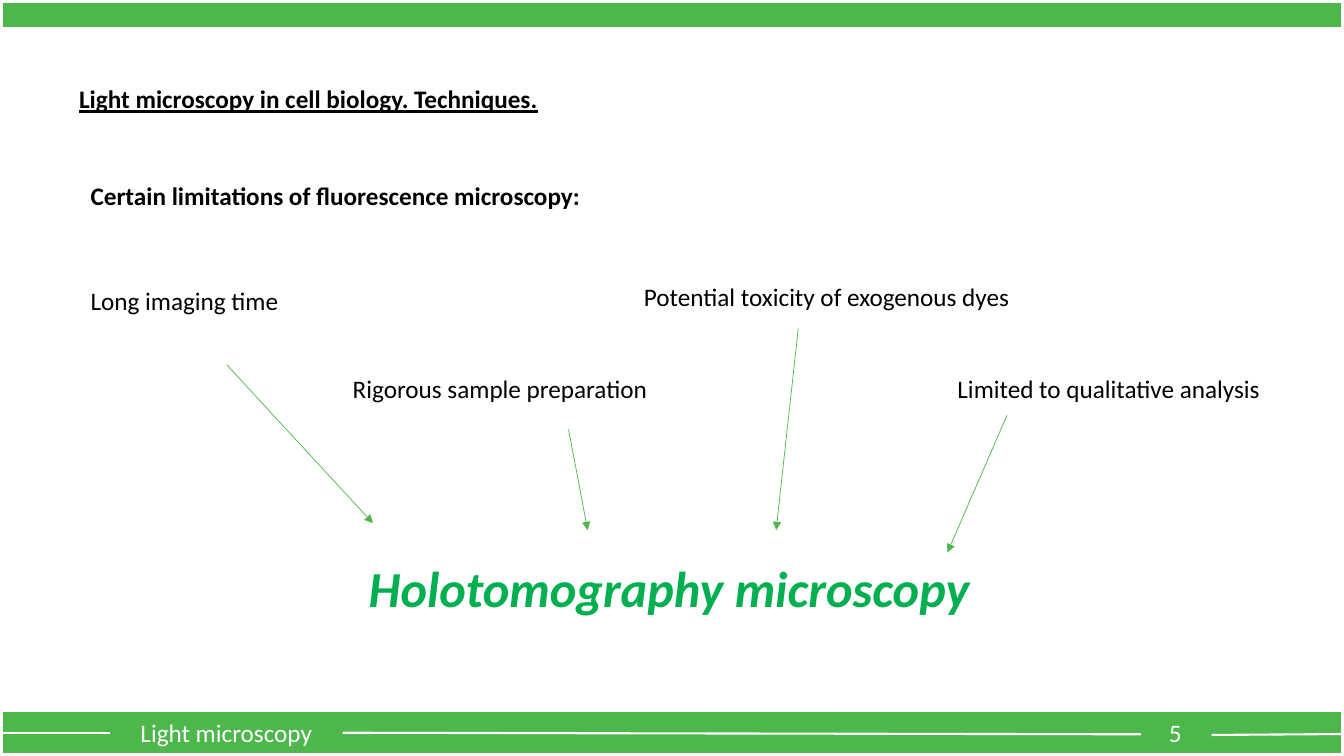
"""Builds the slide on the limitations of fluorescence microscopy."""
from dataclasses import dataclass

from lxml import etree
from pptx import Presentation
from pptx import util as u
from pptx.dml.color import RGBColor
from pptx.enum import shapes, text
from pptx.oxml import ns
from pptx.slide import Slide

GREEN = RGBColor(0x4D, 0xB7, 0x4C)
TITLE_GREEN = RGBColor(0x00, 0xB0, 0x50)
WHITE = RGBColor(0xFF, 0xFF, 0xFF)
BLACK = RGBColor(0x00, 0x00, 0x00)

SLIDE_WIDTH = 960
SLIDE_HEIGHT = 540
LABEL_HEIGHT = 29


@dataclass(frozen=True)
class Band:
    top: float
    height: float


@dataclass(frozen=True)
class Label:
    words: str
    left: float
    top: float
    width: float
    height: float = LABEL_HEIGHT
    size: float = 18
    color: RGBColor = BLACK
    centered: bool = False
    bold: bool = False
    italic: bool = False
    underline: bool = False
    wrap: bool = True


@dataclass(frozen=True)
class Stroke:
    start: tuple[float, float]
    end: tuple[float, float]
    color: RGBColor = WHITE
    weight: float = 1.5
    arrow: bool = False


@dataclass(frozen=True)
class Limitation:
    label: Label
    arrow_start: tuple[float, float]
    arrow_end: tuple[float, float]


BANDS = [Band(0, 21.6), Band(506.2, 33.8)]

FOOTER_RULES = [
    Stroke((0, 523.4), (78.5, 523.4)),
    Stroke((244.8, 523.4), (815, 524.5)),
    Stroke((865.5, 525), (SLIDE_WIDTH, 524.3)),
]

FOOTER_TOP = 508.5
HEADINGS = [
    Label("5", 821.5, FOOTER_TOP, 36, color=WHITE, centered=True),
    Label("Light microscopy", 78.5, FOOTER_TOP, 166.3, color=WHITE, centered=True),
    Label("Light microscopy in cell biology. Techniques.", 39.6, 56.2, 361.4,
          centered=True, bold=True, underline=True),
    Label("Certain limitations of fluorescence microscopy:", 57.6, 125.3, 375.1,
          bold=True),
    Label("Holotomography microscopy", 256.3, 394.6, 447.8, height=51, size=36,
          color=TITLE_GREEN, bold=True, italic=True, wrap=False),
]

LIMITATIONS = [
    Limitation(Label("Long imaging time", 57.6, 200.2, 150.5),
               (162, 260.6), (266.4, 373.7)),
    Limitation(Label("Rigorous sample preparation", 244.8, 262.8, 257.8),
               (406.1, 306.7), (419.8, 378.7)),
    Limitation(Label("Potential toxicity of exogenous dyes", 452.9, 197.3, 298.1),
               (570.2, 234.7), (554.4, 378.7)),
    Limitation(Label("Limited to qualitative analysis", 676.8, 262.8, 257.8),
               (719.3, 296.6), (676.8, 394.6)),
]


def draw_band(slide: Slide, band: Band) -> None:
    """Draw a full-width green band with a white outline."""
    bar = slide.shapes.add_shape(
        shapes.MSO_SHAPE.RECTANGLE,
        0, u.Pt(band.top), u.Pt(SLIDE_WIDTH), u.Pt(band.height))
    bar.shadow.inherit = False
    bar.fill.solid()
    bar.fill.fore_color.rgb = GREEN
    bar.line.color.rgb = WHITE
    bar.line.width = u.Pt(4.5)


def draw_stroke(slide: Slide, stroke: Stroke) -> None:
    """Draw a straight line, with an arrowhead at its end if asked."""
    points = [u.Pt(value) for value in stroke.start + stroke.end]
    connector = slide.shapes.add_connector(
        shapes.MSO_CONNECTOR.STRAIGHT, *points)
    connector.line.color.rgb = stroke.color
    connector.line.width = u.Pt(stroke.weight)
    properties = connector._element.spPr
    if stroke.arrow:
        outline = properties.find(ns.qn("a:ln"))
        etree.SubElement(outline, ns.qn("a:tailEnd"), type="triangle")
    etree.SubElement(properties, ns.qn("a:effectLst"))


def draw_label(slide: Slide, label: Label) -> None:
    """Draw a one-paragraph text box."""
    box = slide.shapes.add_textbox(
        u.Pt(label.left), u.Pt(label.top), u.Pt(label.width), u.Pt(label.height))
    frame = box.text_frame
    frame.word_wrap = label.wrap
    frame.auto_size = text.MSO_AUTO_SIZE.SHAPE_TO_FIT_TEXT
    paragraph = frame.paragraphs[0]
    paragraph.text = label.words
    paragraph.alignment = (
        text.PP_ALIGN.CENTER if label.centered else text.PP_ALIGN.LEFT)
    font = paragraph.font
    font.name = "Calibri"
    font.size = u.Pt(label.size)
    font.color.rgb = label.color
    font.bold = label.bold
    font.italic = label.italic
    font.underline = label.underline


def main() -> None:
    """Build and save the slide."""
    deck = Presentation()
    deck.slide_width = u.Pt(SLIDE_WIDTH)
    deck.slide_height = u.Pt(SLIDE_HEIGHT)
    slide = deck.slides.add_slide(deck.slide_layouts[6])

    for band in BANDS:
        draw_band(slide, band)
    for rule in FOOTER_RULES:
        draw_stroke(slide, rule)
    for heading in HEADINGS:
        draw_label(slide, heading)
    for limitation in LIMITATIONS:
        draw_label(slide, limitation.label)
        draw_stroke(slide, Stroke(limitation.arrow_start, limitation.arrow_end,
                                  GREEN, 0.5, arrow=True))

    deck.save("out.pptx")


if __name__ == "__main__":
    main()
